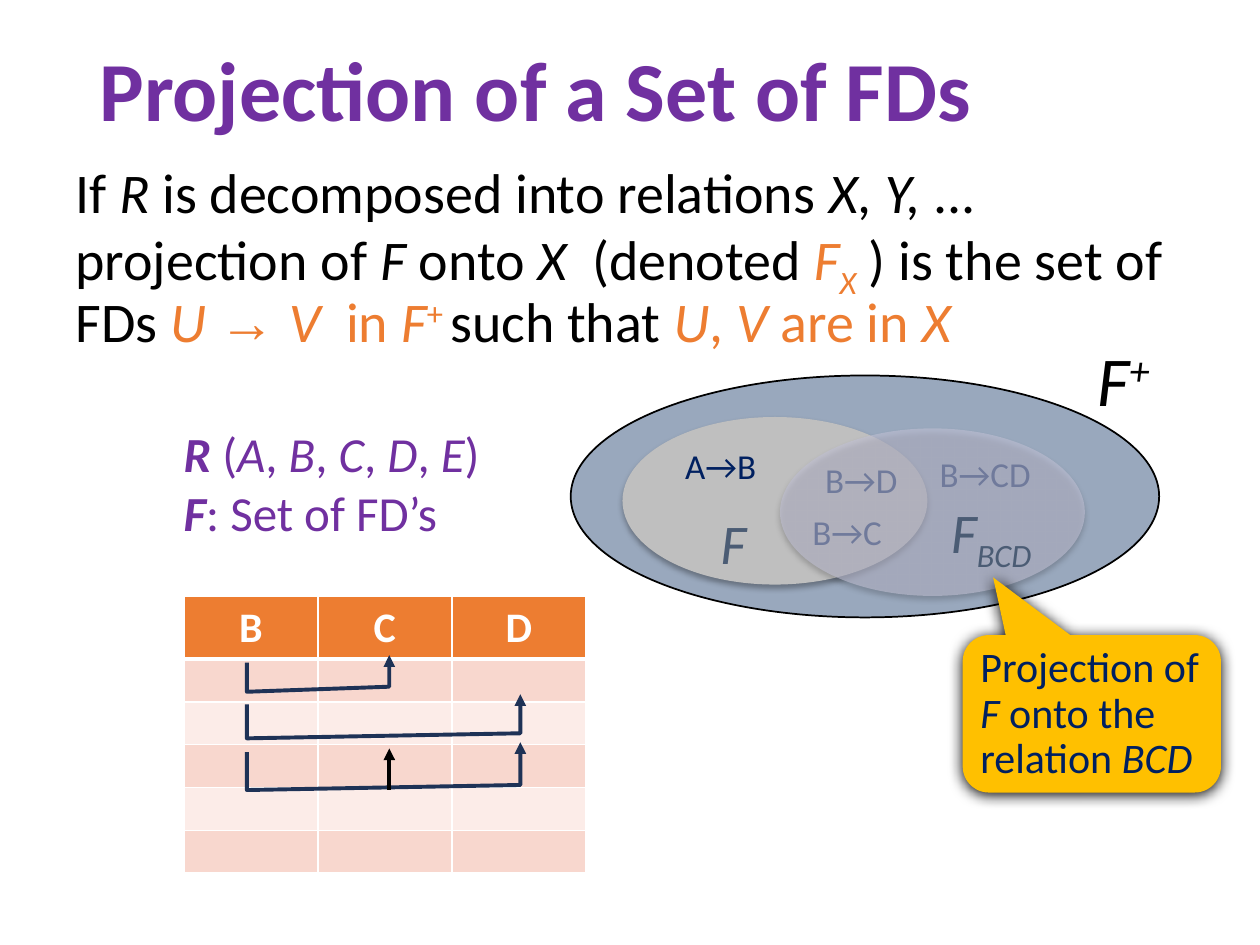
from lxml import etree
from pptx import Presentation
from pptx.dml.color import RGBColor
from pptx.enum import shapes, text
from pptx.oxml import parse_xml
from pptx.oxml.ns import nsdecls, qn
from pptx.util import Inches, Pt

PURPLE = RGBColor(0x70, 0x30, 0xA0)
ORANGE = RGBColor(0xED, 0x7D, 0x31)
BLACK = RGBColor(0, 0, 0)
WHITE = RGBColor(255, 255, 255)
NAVY = RGBColor(0x00, 0x20, 0x60)
SLATE = RGBColor(0x4B, 0x5C, 0x74)
ARROW = RGBColor(0x1E, 0x32, 0x56)
BLUE_GRAY = RGBColor(0x99, 0xA8, 0xBD)
GRAY = RGBColor(0xBF, 0xBF, 0xBF)
LILAC = RGBColor(0xC1, 0xC1, 0xD5)
GOLD = RGBColor(0xFF, 0xC0, 0x00)
BANDS = [RGBColor(0xF8, 0xD7, 0xCE), RGBColor(0xFC, 0xEC, 0xE8)]

# Content: a run is (text, flags); b bold, i italic, o orange, _ subscript, ^ superscript, t Times
TITLE = [[("Projection of a Set of FDs", "b")]]
DEFINITION = [[
    ("If ", ""), ("R", "i"), (" is decomposed into relations ", ""), ("X", "i"),
    (", ", ""), ("Y,", "i"), (" ... projection of ", ""), ("F", "i"), (" onto ", ""),
    ("X", "i"), ("  (denoted ", ""), ("F", "io"), ("X", "io_"),
    (" ) is the set of FDs ", ""), ("U ", "io"), ("→ ", "ot"), ("V  ", "io"),
    ("in ", "o"), ("F", "io"), ("+ ", "o^"), ("such that ", ""), ("U", "io"),
    (", ", "o"), ("V", "io"), (" are in ", "o"), ("X", "io")]]
SCHEMA = [
    [("R", "bi"), (" (", ""), ("A", "i"), (", ", ""), ("B", "i"), (", ", ""), ("C", "i"),
     (", ", ""), ("D", "i"), (", ", ""), ("E", "i"), (")", "")],
    [("F", "bi"), (": Set of FD’s", "")]]
CALLOUT = [[("Projection of ", ""), ("F", "i"), (" onto the relation ", ""), ("BCD", "i")]]
COLUMNS = ["B", "C", "D"]
BODY_ROWS = 5

# Diagram parts, back to front
SOFT_SHADOW = (32, 3.5, 2.2)
DEEP_SHADOW = (100, 8.5, 1)
DIAGRAM = [
    ("ellipse", (4.53, 2.98, 4.67, 1.92), BLUE_GRAY, None, None),
    ("label", (8.61, 2.62, 0.65, 0.77), [("F", "i"), ("+", "i^")], 40, BLACK),
    ("label", (7.36, 3.54, 0.93, 0.44), [("B→CD", "")], 20, NAVY),
    ("ellipse", (4.94, 3.31, 2.42, 1.33), GRAY, None, SOFT_SHADOW),
    ("label", (5.62, 3.99, 0.41, 0.64), [("F", "i")], 32, SLATE),
    ("label", (6.35, 4, 0.76, 0.44), [("B→C", "")], 20, NAVY),
    ("label", (5.34, 3.48, 0.77, 0.44), [("A→B", "")], 20, NAVY),
    ("label", (6.45, 3.59, 0.78, 0.44), [("B→D", "")], 20, NAVY),
    ("ellipse", (6.19, 3.4, 2.42, 1.33), LILAC, 58, SOFT_SHADOW),
    ("label", (7.45, 3.9, 0.91, 0.64), [("F", "i"), ("BCD", "i_")], 32, SLATE),
]

# Dependency arrows: (target x, start y, left corner y, right corner y, tip y)
SOURCE_X, C_X, D_X = 1.96, 3.09, 4.13
DEPENDENCIES = [
    (C_X, 5.26, 5.49, 5.45, 5.2),
    (D_X, 5.59, 5.86, 5.82, 5.51),
    (D_X, 5.97, 6.27, 6.23, 5.89),
]

presentation = Presentation()
presentation.slide_width, presentation.slide_height = Inches(10), Inches(7.5)
slide = presentation.slides.add_slide(presentation.slide_layouts[6])


def inches(values):
    return [Inches(value) for value in values]


def write(frame, paragraphs, size, color, **paragraph_format):
    for index, runs in enumerate(paragraphs):
        paragraph = frame.paragraphs[0] if index == 0 else frame.add_paragraph()
        for name, value in ({"alignment": text.PP_ALIGN.LEFT} | paragraph_format).items():
            setattr(paragraph, name, value)
        for words, flags in runs:
            run = paragraph.add_run()
            run.text = words
            style = {"size": Pt(size), "bold": "b" in flags, "italic": "i" in flags,
                     "name": "Times New Roman" if "t" in flags else "Calibri"}
            for name, value in style.items():
                setattr(run.font, name, value)
            run.font.color.rgb = ORANGE if "o" in flags else color
            for flag, baseline in (("_", "-25000"), ("^", "30000")):
                if flag in flags:
                    run.font._element.set("baseline", baseline)


def add_text(box, paragraphs, size, color, wrap=True, anchor=text.MSO_ANCHOR.TOP, **paragraph_format):
    frame = slide.shapes.add_textbox(*inches(box)).text_frame
    frame.word_wrap = wrap
    frame.vertical_anchor = anchor
    if not wrap:
        frame.auto_size = text.MSO_AUTO_SIZE.SHAPE_TO_FIT_TEXT
    write(frame, paragraphs, size, color, **paragraph_format)


def add_filled(kind, box, color, shadow=None):
    shape = slide.shapes.add_shape(kind, *inches(box))
    shape.shadow.inherit = False
    shape.fill.solid()
    shape.fill.fore_color.rgb = color
    shape.line.fill.background()
    if shadow:
        alpha, blur, distance = shadow
        effects = shape._element.spPr.find(qn("a:effectLst"))
        effects.append(parse_xml(
            f'<a:outerShdw {nsdecls("a")} blurRad="{Pt(blur)}" dist="{Pt(distance)}" dir="5400000" '
            f'rotWithShape="0"><a:srgbClr val="000000"><a:alpha val="{alpha * 1000}"/>'
            '</a:srgbClr></a:outerShdw>'))
    return shape


def style_arrow(shape, color):
    shape.line.color.rgb = color
    shape.line.width = Pt(2.25)
    etree.SubElement(shape.line._get_or_add_ln(), qn("a:tailEnd"), type="triangle")


def style_cell(cell, color, bottom):
    cell.fill.solid()
    cell.fill.fore_color.rgb = color
    for index, (side, width) in enumerate({"L": 1, "R": 1, "T": 1, "B": bottom}.items()):
        cell._tc.get_or_add_tcPr().insert(index, parse_xml(
            f'<a:ln{side} {nsdecls("a")} w="{Pt(width)}"><a:solidFill>'
            f'<a:srgbClr val="{WHITE}"/></a:solidFill></a:ln{side}>'))


# Title, definition and schema
add_text((0.69, 0.24, 8.62, 1.02), TITLE, 48, PURPLE, anchor=text.MSO_ANCHOR.MIDDLE, line_spacing=0.9)
add_text((0.5, 1.26, 9, 1.75), DEFINITION, 32, BLACK,
         line_spacing=0.9, space_before=Pt(10), space_after=Pt(12))
add_text((1.36, 3.31, 3.03, 1.04), SCHEMA, 28, PURPLE, wrap=False)

# Sets of dependencies
for kind, box, content, value, extra in DIAGRAM:
    if kind == "label":
        add_text(box, [content], value, extra, wrap=False)
        continue
    ellipse = add_filled(shapes.MSO_SHAPE.OVAL, box, content, extra)
    if value:
        fill_color = ellipse._element.spPr.find(qn("a:solidFill"))[0]
        etree.SubElement(fill_color, qn("a:alpha"), val=str(value * 1000))
    if not extra:
        ellipse.line.color.rgb = BLACK
        ellipse.line.width = Pt(1)

# Callout
callout = add_filled(shapes.MSO_SHAPE.ROUNDED_RECTANGULAR_CALLOUT, (7.64, 5.04, 2.05, 1.25),
                     GOLD, DEEP_SHADOW)
for index, value in enumerate((-0.382, -0.866, 0.167)):
    callout.adjustments[index] = value
frame = callout.text_frame
frame.word_wrap = True
frame.vertical_anchor = text.MSO_ANCHOR.MIDDLE
for side, margin in {"left": 0.08, "top": 0.05, "right": 0.05, "bottom": 0.05}.items():
    setattr(frame, f"margin_{side}", Inches(margin))
write(frame, CALLOUT, 24, NAVY, line_spacing=Pt(26))

# Relation table
table = slide.shapes.add_table(BODY_ROWS + 1, len(COLUMNS), *inches((1.46, 4.73, 3.19, 2.19))).table
for row_index, row in enumerate(table.rows):
    row.height = Inches(0.34 if row_index else 0.49)
    for cell, heading in zip(row.cells, COLUMNS):
        if row_index:
            cell.margin_top = cell.margin_bottom = 0
            style_cell(cell, BANDS[(row_index - 1) % 2], 1)
        else:
            write(cell.text_frame, [[(heading, "b")]], 24, WHITE, alignment=text.PP_ALIGN.CENTER)
            style_cell(cell, ORANGE, 3)

# Dependency arrows over the table
for target_x, start, left_corner, right_corner, tip in DEPENDENCIES:
    builder = slide.shapes.build_freeform(Inches(SOURCE_X), Inches(start))
    corners = [(SOURCE_X, left_corner), (target_x, right_corner), (target_x, tip)]
    builder.add_line_segments([inches(corner) for corner in corners], close=False)
    arrow = builder.convert_to_shape()
    arrow.shadow.inherit = False
    arrow.fill.background()
    style_arrow(arrow, ARROW)
branch = slide.shapes.add_connector(shapes.MSO_CONNECTOR.STRAIGHT, *inches((C_X, 6.27, C_X, 5.94)))
style_arrow(branch, BLACK)
etree.SubElement(branch._element.spPr, qn("a:effectLst"))

presentation.save("out.pptx")
